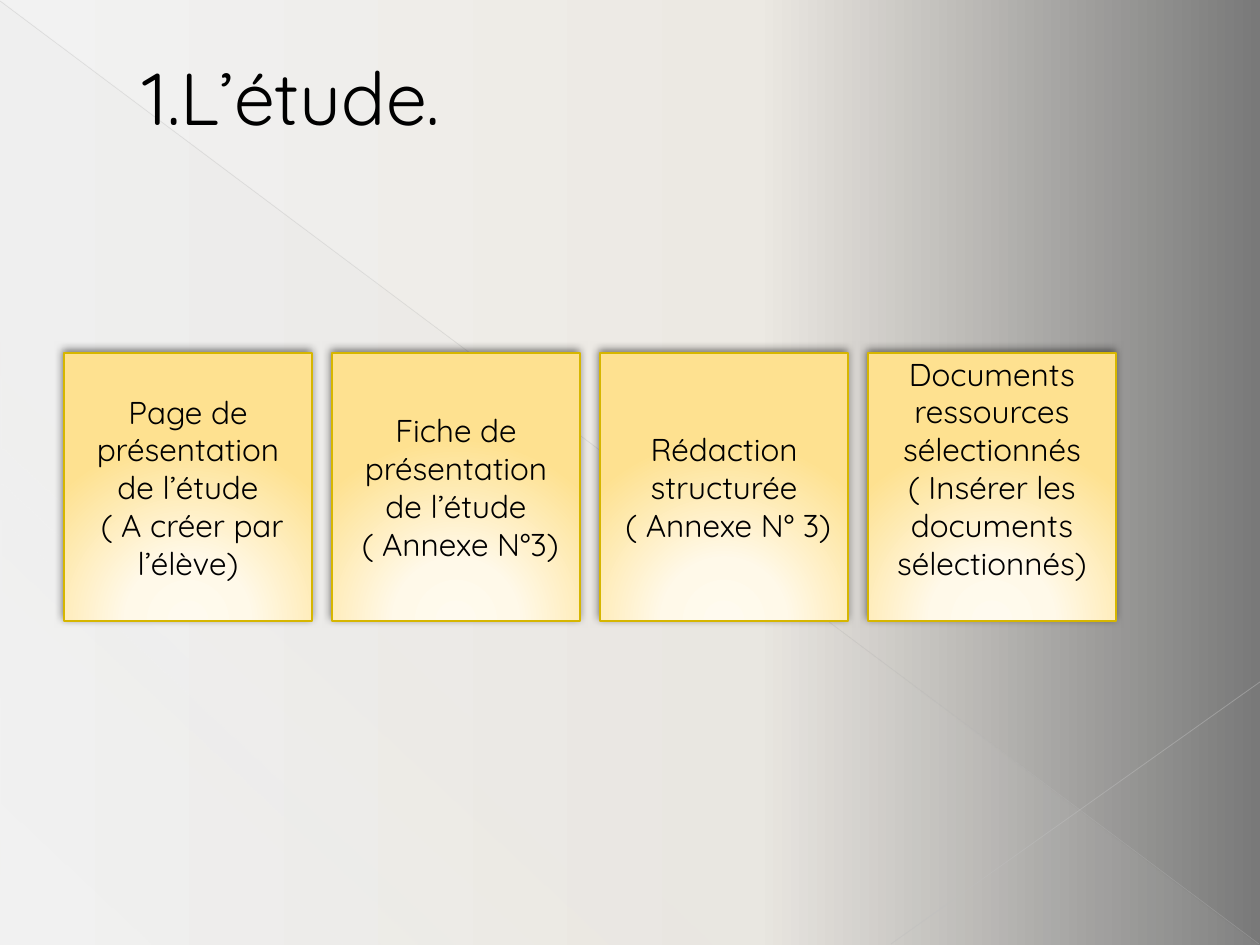
from lxml import etree
from pptx import Presentation
from pptx import util as u
from pptx.dml import color
from pptx.enum import shapes, text
from pptx.oxml import ns

PX = 914400 // 126
FONT = "Quicksand"
CARD_WIDTH, CARD_HEIGHT, CARD_STEP = 248, 268, 268
CARDS_LEFT, CARDS_TOP = 64, 353
CARDS = [
    (["Page de présentation de l’étude", " ( A créer par l’élève)"], 6),
    (["Fiche de présentation de l’étude", " ( Annexe N°3)"], 6),
    (["Rédaction structurée", " ( Annexe N°\u00a03)"], 6),
    (["Documents ressources sélectionnés", "( Insérer les documents sélectionnés)"], 44),
]
CARD_STOPS = [(0, "FFFAEF", 100), (34, "FFF9E9", 100), (100, "FEE190", 100)]
CARD_GLOW = '<a:path path="circle"><a:fillToRect l="50000" t="155000" r="50000" b="-55000"/></a:path>'


def px(*lengths):
    """Turn pixel lengths into EMU."""
    return [u.Emu(length * PX) for length in lengths]


def rgb(value):
    """Return the colour of a hex string."""
    return color.RGBColor.from_string(value)


def element(markup):
    """Parse DrawingML markup whose root is in the a: namespace."""
    head, rest = markup.split(">", 1)
    slash = "/" if head.endswith("/") else ""
    return etree.fromstring(f'{head.rstrip("/")} xmlns:a="{ns.nsuri("a")}"{slash}>{rest}')


def colour_markup(value, opacity=100):
    """Return markup for a colour with an opacity in percent."""
    return f'<a:srgbClr val="{value}"><a:alpha val="{opacity * 1000}"/></a:srgbClr>'


def set_gradient(fill, properties, stops, direction):
    """Replace the fill in a properties element by a gradient."""
    fill.solid()
    marks = "".join(
        f'<a:gs pos="{place * 1000}">{colour_markup(value, opacity)}</a:gs>'
        for place, value, opacity in stops
    )
    gradient = element(f'<a:gradFill rotWithShape="1"><a:gsLst>{marks}</a:gsLst>{direction}</a:gradFill>')
    solid = properties.find(ns.qn("a:solidFill"))
    properties.replace(solid, gradient)


def linear(angle):
    """Return markup for a linear gradient direction in degrees."""
    return f'<a:lin ang="{angle * 60000}" scaled="0"/>'


def add_background(slide):
    """Shade the slide from light to dark grey."""
    fill = slide.background.fill
    fill.solid()
    properties = slide.element.find(f".//{ns.qn('p:bgPr')}")
    stops = [(0, "F2F2F2", 100), (60, "ECE9E3", 50), (100, "797979", 100)]
    set_gradient(fill, properties, stops, linear(0))


def add_corner(slide):
    """Add the faint triangle over the lower left half."""
    corner = slide.shapes.add_shape(shapes.MSO_SHAPE.RIGHT_TRIANGLE, *px(1, 2, 1258, 943))
    corner.shadow.inherit = False
    corner.line.fill.background()
    stops = [(0, "D4D2D0", 10), (70, "D4D2D0", 8), (100, "D4D2D0", 1)]
    set_gradient(corner.fill, corner.element.spPr, stops, linear(133))


def add_diagonal(slide, ends, value, width, opacity):
    """Add a thin translucent line."""
    diagonal = slide.shapes.add_connector(shapes.MSO_CONNECTOR.STRAIGHT, *px(*ends))
    diagonal.line.color.rgb = rgb(value)
    diagonal.line.width = u.Pt(width)
    tint = diagonal.element.spPr.find(f".//{ns.qn('a:srgbClr')}")
    tint.append(element(f'<a:alpha val="{opacity * 1000}"/>'))
    diagonal.element.spPr.append(element("<a:effectLst/>"))


def add_run(paragraph, wording, size):
    """Add a black run and return it."""
    run = paragraph.add_run()
    run.text = wording
    run.font.name = FONT
    run.font.size = u.Pt(size)
    run.font.color.rgb = rgb("000000")
    return run


def add_title(slide, wording):
    """Add the outlined slide title."""
    title = slide.shapes.add_textbox(*px(63, 37, 1134, 118))
    frame = title.text_frame
    frame.word_wrap = True
    frame.vertical_anchor = text.MSO_ANCHOR.MIDDLE
    frame.margin_left = px(80)[0]
    run = add_run(frame.paragraphs[0], wording, 42)
    outline = f'<a:ln w="6350"><a:solidFill>{colour_markup("4C6F7A")}</a:solidFill></a:ln>'
    run.font._element.insert(0, element(outline))


def add_card(slide, left, lines, bottom_margin):
    """Add a glowing yellow card with centred lines."""
    card = slide.shapes.add_shape(
        shapes.MSO_SHAPE.RECTANGLE, *px(left, CARDS_TOP, CARD_WIDTH, CARD_HEIGHT)
    )
    set_gradient(card.fill, card.element.spPr, CARD_STOPS, CARD_GLOW)
    card.line.color.rgb = rgb("D6B600")
    card.line.width = u.Pt(0.75)
    card.shadow.inherit = False
    effects = card.element.spPr.find(ns.qn("a:effectLst"))
    effects.append(element(
        f'<a:outerShdw blurRad="{u.Pt(5)}" dist="{u.Pt(2)}" dir="{245 * 60000}" '
        f'rotWithShape="0">{colour_markup("000000", 50)}</a:outerShdw>'
    ))
    frame = card.text_frame
    frame.word_wrap = True
    frame.vertical_anchor = text.MSO_ANCHOR.MIDDLE
    frame.margin_bottom = px(bottom_margin)[0]
    for index, line in enumerate(lines):
        paragraph = frame.add_paragraph() if index else frame.paragraphs[0]
        paragraph.alignment = text.PP_ALIGN.CENTER
        add_run(paragraph, line, 18)


def main():
    """Build the slide and save it."""
    deck = Presentation()
    deck.slide_width, deck.slide_height = px(1260, 945)
    slide = deck.slides.add_slide(deck.slide_layouts[6])
    add_background(slide)
    add_corner(slide)
    add_diagonal(slide, (0, 1, 1259, 944), "B7B7B7", 0.39, 35)
    add_diagonal(slide, (1260, 682, 891, 944), "BFBFBF", 0.47, 45)
    add_title(slide, "1.L’étude.")
    for index, (lines, bottom_margin) in enumerate(CARDS):
        add_card(slide, CARDS_LEFT + index * CARD_STEP, lines, bottom_margin)
    deck.save("out.pptx")


if __name__ == "__main__":
    main()
